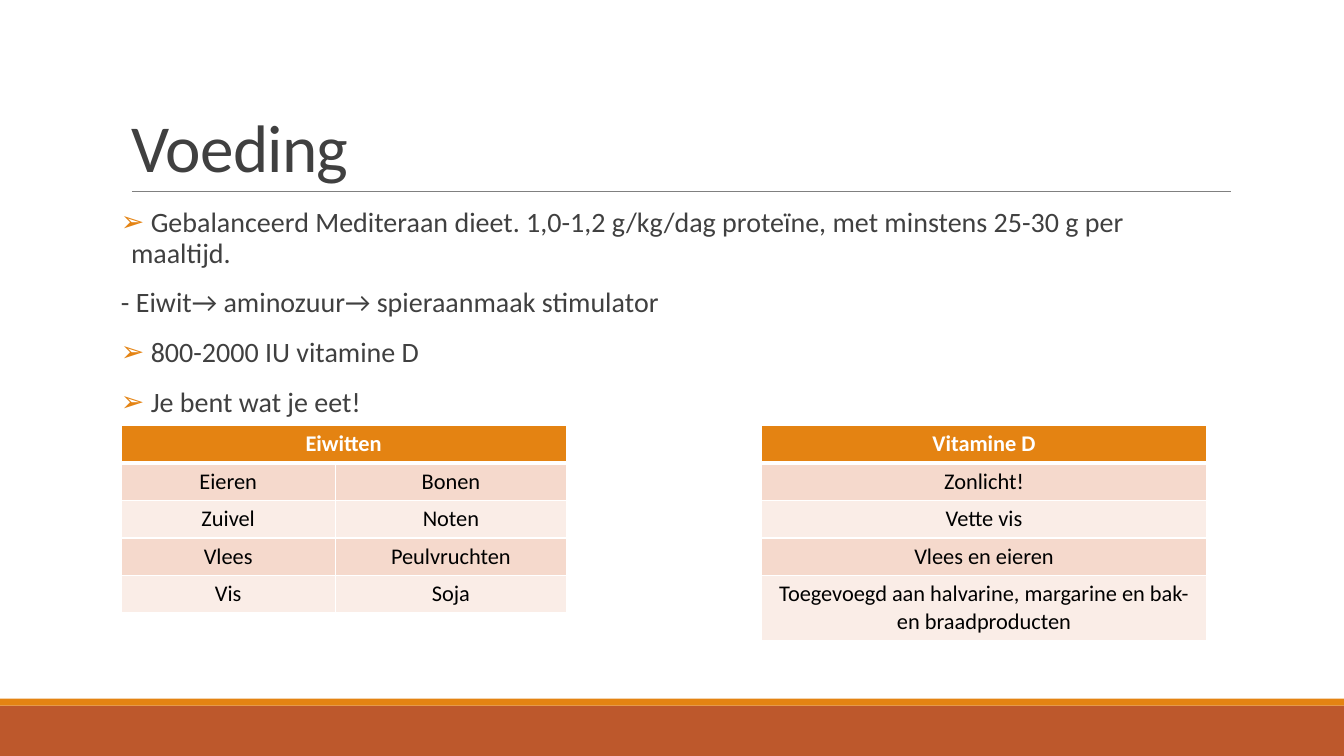
"""Build the slide on nutrition: a title, a bullet list and two food tables."""
from lxml.etree import SubElement as Sub
from pptx import Presentation
from pptx.dml.color import RGBColor
from pptx.enum.shapes import MSO_CONNECTOR as LINE, MSO_SHAPE as SHAPE
from pptx.enum.text import MSO_ANCHOR as ANCHOR, MSO_AUTO_SIZE as FIT, PP_ALIGN as ALIGN
from pptx.oxml.ns import qn
from pptx.util import Pt

ORANGE, RUST, GREY, INK = "E48312", "BD582C", "808080", "404040"
WHITE, BLACK = "FFFFFF", "000000"
BANDS = "F5D9CC", "FAEDE7"
WIDE, HIGH = 960, 540
LEFT, SPAN = 86.4, 792


def hue(code):
    return RGBColor.from_string(code)


def solid(node, code):
    Sub(Sub(node, qn("a:solidFill")), qn("a:srgbClr"), val=code)


class Page:
    def __init__(self, deck, face="Calibri"):
        self.face = face
        self.slide = deck.slides.add_slide(deck.slide_layouts[1])
        self.shapes = self.slide.shapes

    def style(self, para, size, code, bold=False):
        font = para.font
        font.name, font.size, font.bold = self.face, Pt(size), bold
        font.color.rgb = hue(code)

    def frame(self, holder, box, side, anchor):
        holder.left, holder.top, holder.width, holder.height = map(Pt, box)
        frame = holder.text_frame
        frame.word_wrap, frame.auto_size = True, FIT.NONE
        frame.vertical_anchor = anchor
        frame.margin_left = frame.margin_right = Pt(side)
        frame.margin_top = frame.margin_bottom = Pt(3.6)
        return frame

    def title(self, text, box):
        frame = self.frame(self.shapes.title, box, 7.2, ANCHOR.BOTTOM)
        frame.text = text
        para = frame.paragraphs[0]
        para.alignment, para.line_spacing = ALIGN.LEFT, 0.85
        self.style(para, 48, INK)
        para._p.pPr.find(qn("a:defRPr")).set("spc", "-50")

    def list(self, items, box):
        frame = self.frame(self.slide.placeholders[1], box, 0, ANCHOR.TOP)
        frame.text = "\n".join(text for text, mark in items)
        for para, (text, mark) in zip(frame.paragraphs, items):
            para.alignment, para.line_spacing = ALIGN.LEFT, 0.9
            para.space_before, para.space_after = Pt(12), Pt(2)
            props = para._p.get_or_add_pPr()
            dent = Pt(7.2) if mark else 0
            props.set("marL", str(dent))
            props.set("indent", str(-dent))
            if mark:
                Sub(Sub(props, qn("a:buClr")), qn("a:srgbClr"), val=ORANGE)
                Sub(props, qn("a:buChar"), char=mark)
            else:
                Sub(props, qn("a:buNone"))
            self.style(para, 20, INK)

    def bar(self, top, height, code):
        bar = self.shapes.add_shape(SHAPE.RECTANGLE, 0, Pt(top), Pt(WIDE), Pt(height))
        bar.shadow.inherit = False
        bar.fill.solid()
        bar.fill.fore_color.rgb = hue(code)
        bar.line.fill.background()

    def rule(self, left, right, top):
        rule = self.shapes.add_connector(LINE.STRAIGHT, Pt(left), Pt(top), Pt(right), Pt(top))
        rule.line.color.rgb, rule.line.width = hue(GREY), Pt(0.5)
        Sub(rule._element.spPr, qn("a:effectLst"))

    def cell(self, cell, text, row):
        props = cell._tc.get_or_add_tcPr()
        for side in "LRTB":
            thick = 3 if (row, side) in ((0, "B"), (1, "T")) else 1
            solid(Sub(props, qn("a:ln" + side), w=str(Pt(thick))), WHITE)
        cell.fill.solid()
        cell.fill.fore_color.rgb = hue(BANDS[(row - 1) % 2] if row else ORANGE)
        cell.text = text
        para = cell.text_frame.paragraphs[0]
        para.alignment = ALIGN.CENTER
        self.style(para, 16, BLACK if row else WHITE, not row)

    def table(self, left, top, cols, head, body):
        rows = [[head] + [""] * (len(cols) - 1)] + body
        high = 20.16
        table = self.shapes.add_table(len(rows), len(cols), Pt(left), Pt(top),
                                      Pt(sum(cols)), Pt(high * len(rows))).table
        for col, width in zip(table.columns, cols):
            col.width = Pt(width)
        for r, row in enumerate(rows):
            table.rows[r].height = Pt(high)
            for c, text in enumerate(row):
                self.cell(table.cell(r, c), text, r)
        if len(cols) > 1:
            table.cell(0, 0).merge(table.cell(0, len(cols) - 1))


def main():
    deck = Presentation()
    deck.slide_width, deck.slide_height = Pt(WIDE), Pt(HIGH)
    page = Page(deck)
    page.bar(504, 36, RUST)
    page.bar(499, 5, ORANGE)
    page.rule(94.3, 879, 136.8)
    page.title("Voeding", (LEFT, 22.5, SPAN, 114.2))
    page.list([
        (" Gebalanceerd Mediteraan dieet. 1,0-1,2 g/kg/dag proteïne, "
         "met minstens 25-30 g per maaltijd.", "➢"),
        ("- Eiwit→ aminozuur→ spieraanmaak stimulator", ""),
        (" 800-2000 IU vitamine D", "➢"),
        (" Je bent wat je eet!", "➢"),
    ], (LEFT, 145.4, SPAN, 316.8))
    page.table(LEFT, 304, (153.2, 165), "Eiwitten", [
        ["Eieren", "Bonen"], ["Zuivel", "Noten"],
        ["Vlees", "Peulvruchten"], ["Vis", "Soja"]])
    page.table(543.8, 304, (318.2,), "Vitamine D", [
        ["Zonlicht!"], ["Vette vis"], ["Vlees en eieren"],
        ["Toegevoegd aan halvarine, margarine en bak- en braadproducten"]])
    deck.save("out.pptx")


if __name__ == "__main__":
    main()
